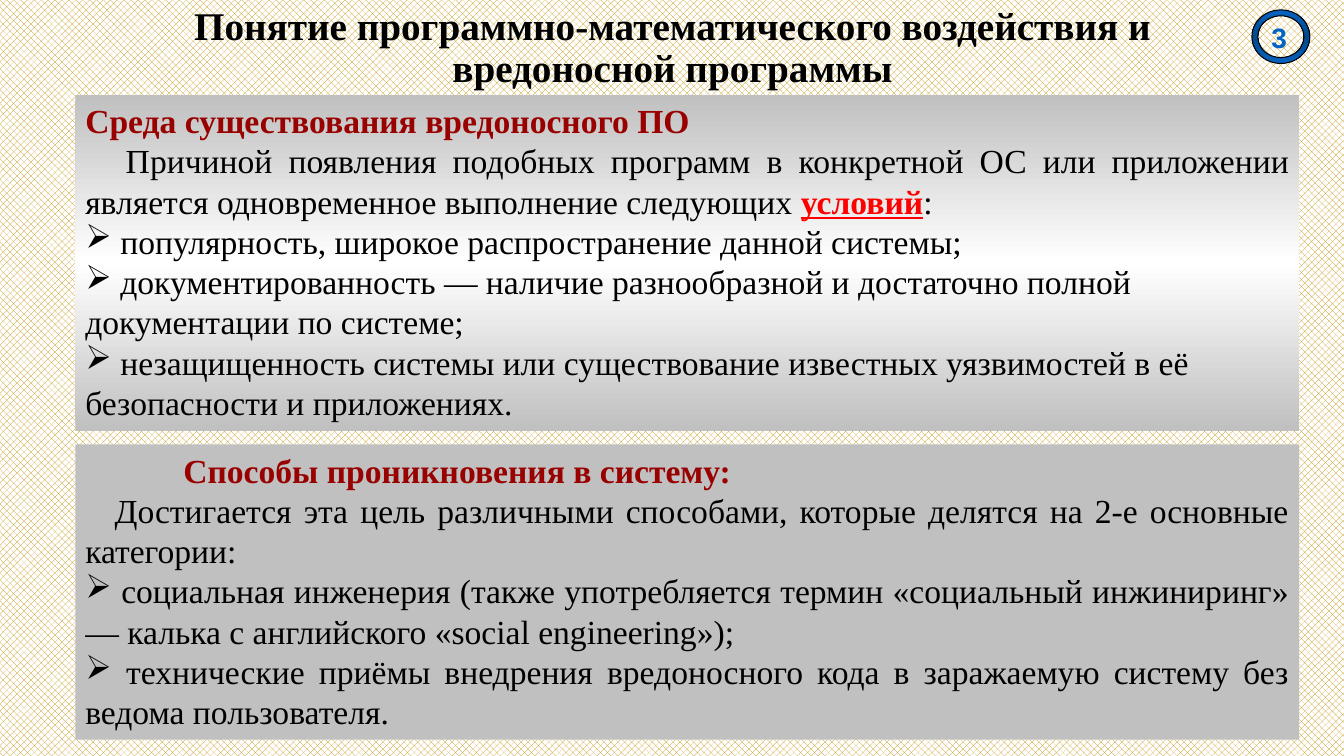
from lxml import etree
from pptx import Presentation
from pptx.dml.color import RGBColor
from pptx.enum.dml import MSO_PATTERN
from pptx.enum.shapes import MSO_SHAPE as SHAPE
from pptx.enum.text import MSO_ANCHOR as ANCHOR, PP_ALIGN as ALIGN
from pptx.oxml import parse_xml
from pptx.oxml.ns import nsdecls, qn
from pptx.util import Cm, Pt

BLACK = RGBColor(0x00, 0x00, 0x00)
WHITE = RGBColor(0xFF, 0xFF, 0xFF)
GOLD = RGBColor(0xBF, 0x90, 0x00)
GRAY = RGBColor(0xC0, 0xC0, 0xC0)
MAROON = RGBColor(0x99, 0x00, 0x00)
RED = RGBColor(0xFF, 0x00, 0x00)
BLUE = RGBColor(0x05, 0x63, 0xC1)
NAVY = RGBColor(0x04, 0x47, 0x8A)
SERIF = "Times New Roman"
PANEL_LEFT, PANEL_WIDTH = 1.9, 30.84


def set_gradient(s, edge, middle):
    """Fill a shape from edge colour to middle colour and back, downwards."""
    stops = "".join(
        f'<a:gs pos="{pos}"><a:srgbClr val="{color}"/></a:gs>'
        for pos, color in ((0, edge), (50000, middle), (100000, edge)))
    s.fill.background()
    old = s._element.spPr.find(qn("a:noFill"))
    old.getparent().replace(old, parse_xml(
        f'<a:gradFill {nsdecls("a")} rotWithShape="1"><a:gsLst>{stops}</a:gsLst>'
        '<a:lin ang="5400000" scaled="1"/></a:gradFill>'))


def add_paragraph(tf, text, size=24, color=BLACK, bold=False, align=ALIGN.LEFT,
                  font=SERIF):
    """Append a styled paragraph, using the empty first one when it is free."""
    first = tf.paragraphs[0]
    p = tf.add_paragraph() if first.runs else first
    p.alignment = align
    p.font.name, p.font.size, p.font.bold = font, Pt(size), bold
    p.font.color.rgb = color
    p.add_run().text = text
    return p


def set_indent(p, first, left=0):
    """Set the left margin and the first-line indent in centimetres."""
    pPr = p._p.get_or_add_pPr()
    pPr.set("marL", str(Cm(left)))
    pPr.set("indent", str(Cm(first)))


def add_bullet(tf, text, align=ALIGN.LEFT):
    """Append an arrow-bulleted paragraph."""
    p = add_paragraph(tf, f" {text}", align=align)
    set_indent(p, 0)
    bullet = etree.Element(qn("a:buChar"), char="➢")
    p._p.pPr.find(qn("a:defRPr")).addprevious(bullet)


def add_panel(slide, top, height):
    """Add a gray rectangle for text and return it."""
    s = slide.shapes.add_shape(SHAPE.RECTANGLE, Cm(PANEL_LEFT), Cm(top),
                               Cm(PANEL_WIDTH), Cm(height))
    s.shadow.inherit = False
    s.fill.solid()
    s.fill.fore_color.rgb = GRAY
    s.line.fill.background()
    s.text_frame.word_wrap = True
    s.text_frame.vertical_anchor = ANCHOR.TOP
    return s


def add_text(slide, left, top, width, height):
    """Add a wrapping, vertically centred text box and return its frame."""
    s = slide.shapes.add_textbox(Cm(left), Cm(top), Cm(width), Cm(height))
    tf = s.text_frame
    tf.word_wrap = True
    tf.vertical_anchor = ANCHOR.MIDDLE
    return tf


def add_environment(slide):
    """Add the panel on the environment of malicious software."""
    s = add_panel(slide, 2.39, 8.46)
    set_gradient(s, GRAY, WHITE)
    tf = s.text_frame
    add_paragraph(tf, "Среда существования вредоносного ПО", color=MAROON, bold=True)
    p = add_paragraph(
        tf, "Причиной появления подобных программ в конкретной ОС или приложении "
        "является одновременное выполнение следующих ", align=ALIGN.JUSTIFY)
    set_indent(p, 1.02)
    r = p.add_run()
    r.text = "условий"
    r.font.bold = r.font.underline = True
    r.font.color.rgb = RED
    p.add_run().text = ":"
    for text in (
            "популярность, широкое распространение данной системы;",
            "документированность — наличие разнообразной и достаточно полной "
            "документации по системе;",
            "незащищенность системы или существование известных уязвимостей в её "
            "безопасности и приложениях."):
        add_bullet(tf, text)


def add_penetration(slide):
    """Add the panel on the ways of getting into a system."""
    tf = add_panel(slide, 11.2, 7.44).text_frame
    p = add_paragraph(tf, "Способы проникновения в систему:", color=MAROON, bold=True)
    set_indent(p, 1.48, left=0.99)
    p = add_paragraph(
        tf, "Достигается эта цель различными способами, которые делятся на "
        "2-е основные категории:", align=ALIGN.JUSTIFY)
    set_indent(p, 0.74)
    for text in (
            "социальная инженерия (также употребляется термин «социальный "
            "инжиниринг» — калька с английского «social engineering»);",
            "технические приёмы внедрения вредоносного кода в заражаемую систему "
            "без ведома пользователя."):
        add_bullet(tf, text, ALIGN.JUSTIFY)


def add_title(slide):
    """Add the slide title."""
    tf = add_text(slide, 2.34, 0.5, 29.21, 1.45)
    p = add_paragraph(tf, "Понятие программно-математического воздействия и "
                      "вредоносной программы", 28, bold=True, align=ALIGN.CENTER)
    p.line_spacing = 0.9


def add_number(slide, number):
    """Add the ringed slide number."""
    ring = slide.shapes.add_shape(SHAPE.DONUT, Cm(31.55), Cm(0.25), Cm(1.46), Cm(1.35))
    ring.shadow.inherit = False
    ring.adjustments[0] = 0.11
    set_gradient(ring, BLUE, NAVY)
    ring.line.color.rgb = BLACK
    ring.line.width = Pt(0.75)
    tf = add_text(slide, 31.83, 0.5, 0.81, 0.86)
    tf.margin_left = tf.margin_right = tf.margin_top = tf.margin_bottom = 0
    add_paragraph(tf, number, 20, BLUE, True, ALIGN.CENTER, "Arial")


def main():
    """Build and save the slide."""
    prs = Presentation()
    prs.slide_width, prs.slide_height = Cm(33.87), Cm(19.05)
    slide = prs.slides.add_slide(prs.slide_layouts[6])
    fill = slide.background.fill
    fill.patterned()
    fill.pattern = MSO_PATTERN.PERCENT_50
    fill.fore_color.rgb, fill.back_color.rgb = GOLD, WHITE
    add_environment(slide)
    add_penetration(slide)
    add_title(slide)
    add_number(slide, "3")
    prs.save("out.pptx")


if __name__ == "__main__":
    main()
